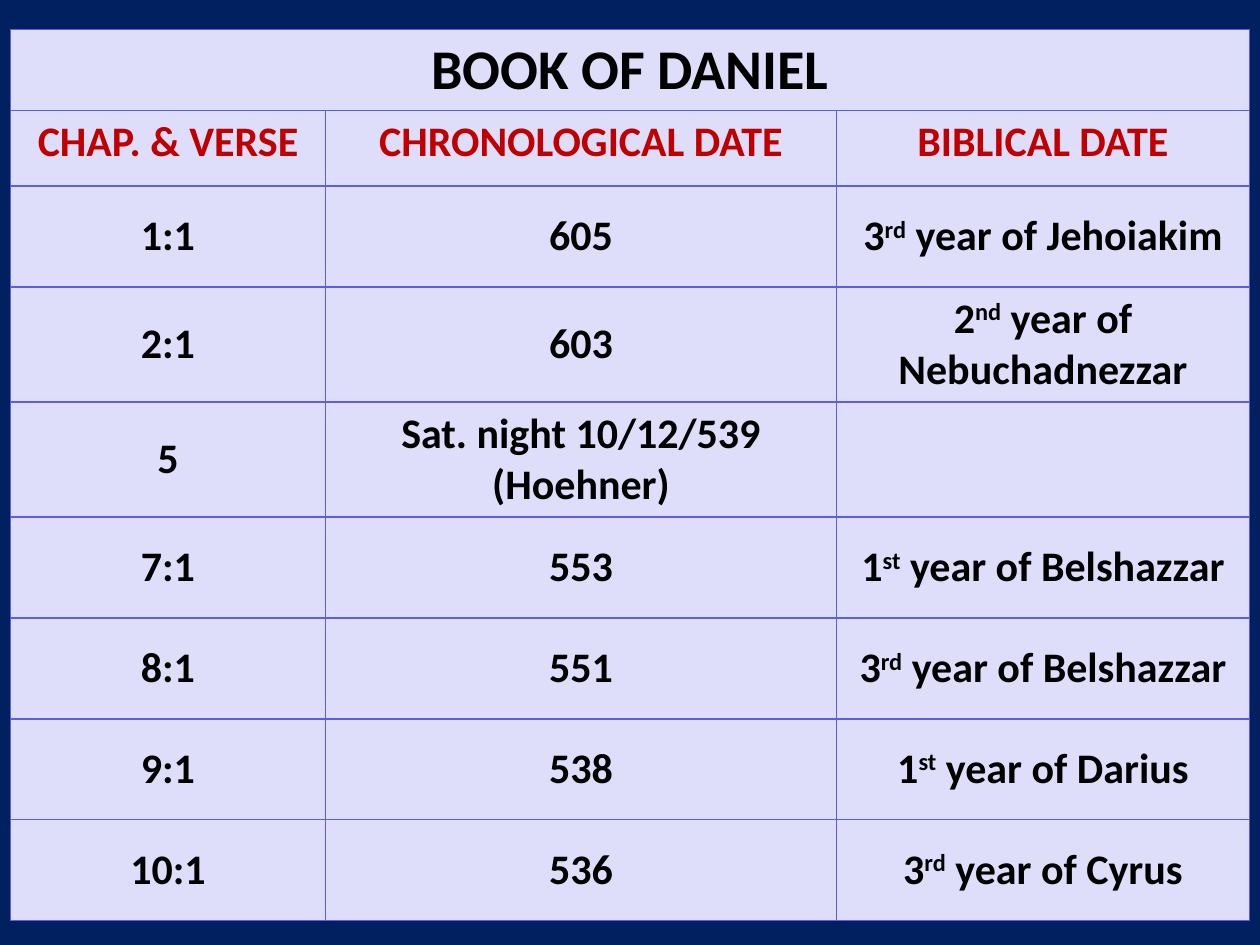
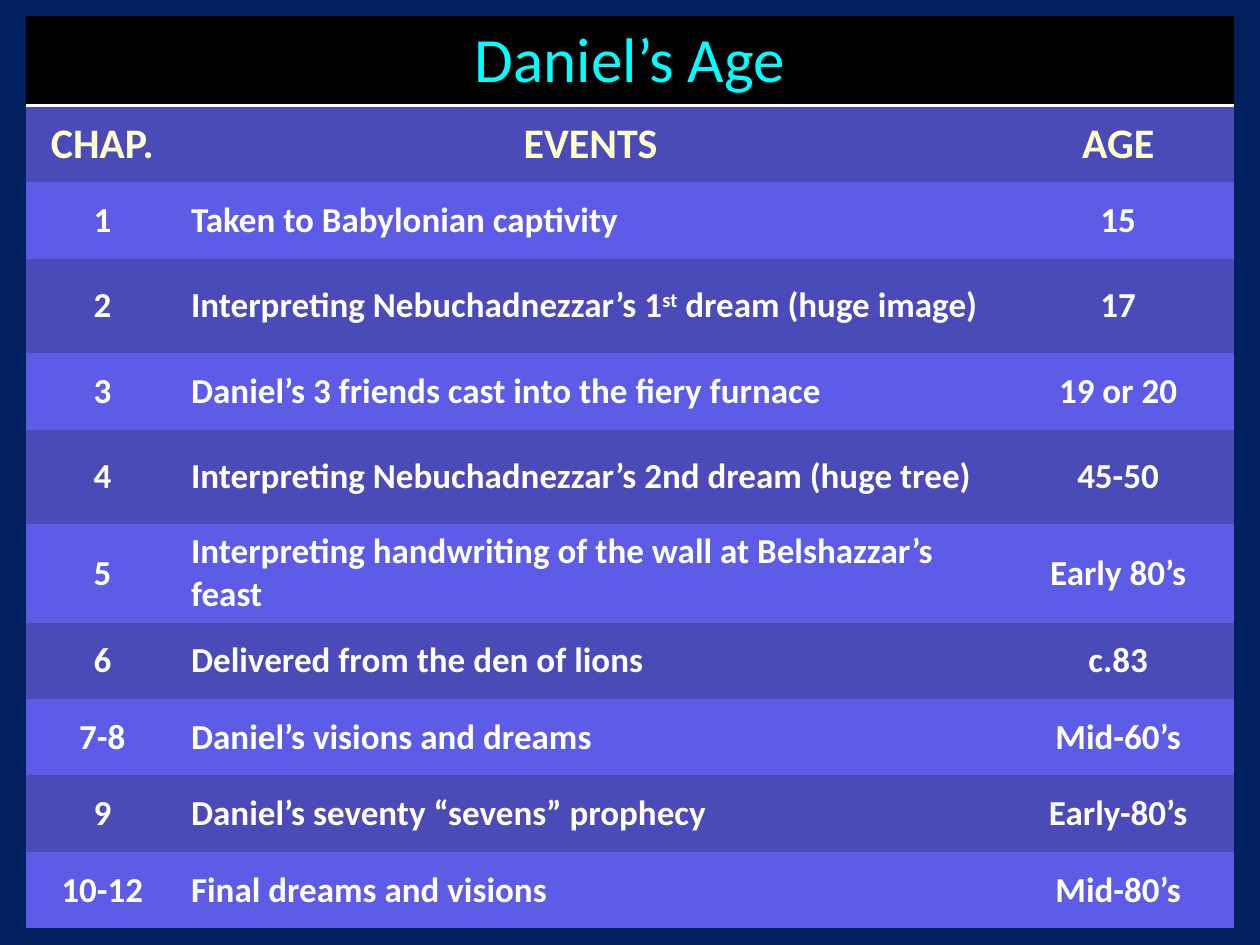
from lxml import etree
from pptx import Presentation
from pptx import util as u
from pptx.dml.color import RGBColor
from pptx.enum import text
from pptx.oxml.ns import qn

Pt = u.Pt
FONT = "Calibri"
NO_STYLE = "{2D5ABB26-0587-4C30-8999-92F81FD0307C}"
C = {
    "navy": "002060", "lilac": "DEDEFA", "violet": "5C5CE7", "indigo": "4A4AB9",
    "red": "C00000", "cyan": "00FFFF", "cream": "FFFFCC", "black": "000000", "white": "FFFFFF",
}
CENTER, LEFT = text.PP_ALIGN.CENTER, text.PP_ALIGN.LEFT
TOP, MIDDLE = text.MSO_ANCHOR.TOP, text.MSO_ANCHOR.MIDDLE

DATES = [
    ("1:1", "605", "3^rd^ year of Jehoiakim"),
    ("2:1", "603", "2^nd^ year of Nebuchadnezzar"),
    ("5", "Sat. night 10/12/539 (Hoehner)", ""),
    ("7:1", "553", "1^st^ year of Belshazzar"),
    ("8:1", "551", "3^rd^ year of Belshazzar"),
    ("9:1", "538", "1^st^ year of Darius"),
    ("10:1", "536", "3^rd^ year of Cyrus"),
]
AGES = [
    ("1", "Taken to Babylonian captivity", "15"),
    ("2", "Interpreting Nebuchadnezzar’s 1^st^ dream (huge image)", "17"),
    ("3", "Daniel’s 3 friends cast into the fiery furnace", "19 or 20"),
    ("4", "Interpreting Nebuchadnezzar’s 2nd dream (huge tree)", "45-50"),
    ("5", "Interpreting handwriting of the wall at Belshazzar’s feast", "Early 80’s"),
    ("6", "Delivered from the den of lions", "c.83"),
    ("7-8", "Daniel’s visions and dreams", "Mid-60’s"),
    ("9", "Daniel’s seventy “sevens” prophecy", "Early-80’s"),
    ("10-12", "Final dreams and visions", "Mid-80’s"),
]


def rgb(name):
    return RGBColor.from_string(C[name])


def write(cell, content, size=24, color="black", bold=True, align=CENTER, anchor=MIDDLE):
    cell.vertical_anchor = anchor
    p = cell.text_frame.paragraphs[0]
    p.alignment = align
    for i, part in enumerate(content.split("^")):
        if not part:
            continue
        r = p.add_run()
        r.text = part
        r.font.name, r.font.size, r.font.bold = FONT, Pt(size), bold
        r.font.color.rgb = rgb(color)
        if i % 2:
            r._r.get_or_add_rPr().set("baseline", "30000")


def paint(cell, fill, sides=(), line="white", weight=1):
    tc_pr = cell._tc.get_or_add_tcPr()
    for side in sides:
        ln = etree.SubElement(tc_pr, qn(f"a:ln{side}"), w=str(Pt(weight)))
        solid = etree.SubElement(ln, qn("a:solidFill"))
        etree.SubElement(solid, qn("a:srgbClr"), val=C[line])
    cell.fill.solid()
    cell.fill.fore_color.rgb = rgb(fill)


def add_grid(s, left, top, widths, heights):
    frame = s.shapes.add_table(len(heights), len(widths), Pt(left), Pt(top),
                               Pt(sum(widths)), Pt(sum(heights)))
    table = frame.table
    table.first_row = table.horz_banding = False
    table._tbl.tblPr.find(qn("a:tableStyleId")).text = NO_STYLE
    for col, width in zip(table.columns, widths):
        col.width = Pt(width)
    for row, height in zip(table.rows, heights):
        row.height = Pt(height)
    table.cell(0, 0).merge(table.cell(0, len(widths) - 1))
    return table


def add_slide(prs):
    s = prs.slides.add_slide(prs.slide_layouts[6])
    s.background.fill.solid()
    s.background.fill.fore_color.rgb = rgb("navy")
    return s


def dates_table(s, left, top):
    table = add_grid(s, left, top, [180, 292, 236], [43.2] * 2 + [57.6] * len(DATES))
    for cell in table.iter_cells():
        paint(cell, "lilac", "LRTB", "violet")
    write(table.cell(0, 0), "BOOK OF DANIEL", size=32, anchor=TOP)
    for c, heading in enumerate(("CHAP. & VERSE", "CHRONOLOGICAL DATE", "BIBLICAL DATE")):
        write(table.cell(1, c), heading, color="red", anchor=TOP)
    for r, record in enumerate(DATES, 2):
        for c, value in enumerate(record):
            write(table.cell(r, c), value)


def ages_table(s, left, top):
    heights = [49] + [54 if r in (3, 5, 6) else 43.7 for r in range(1, len(AGES) + 2)]
    table = add_grid(s, left, top, [87, 471, 132], heights)
    for c, heading in enumerate(("CHAP.", "EVENTS", "AGE")):
        paint(table.cell(0, c), "black", "B", weight=2)
        paint(table.cell(1, c), "indigo")
        write(table.cell(1, c), heading, color="cream")
    write(table.cell(0, 0), "Daniel’s Age", size=36, color="cyan", bold=False, anchor=TOP)
    for r, record in enumerate(AGES, 2):
        for c, value in enumerate(record):
            paint(table.cell(r, c), "indigo" if r % 2 else "violet")
            write(table.cell(r, c), value, size=20, color="white",
                  align=LEFT if c == 1 else CENTER)


def main():
    prs = Presentation()
    prs.slide_width, prs.slide_height = Pt(720), Pt(540)
    dates_table(add_slide(prs), 6, 16.8)
    ages_table(add_slide(prs), 15, 9.2)
    prs.save("out.pptx")


if __name__ == "__main__":
    main()
